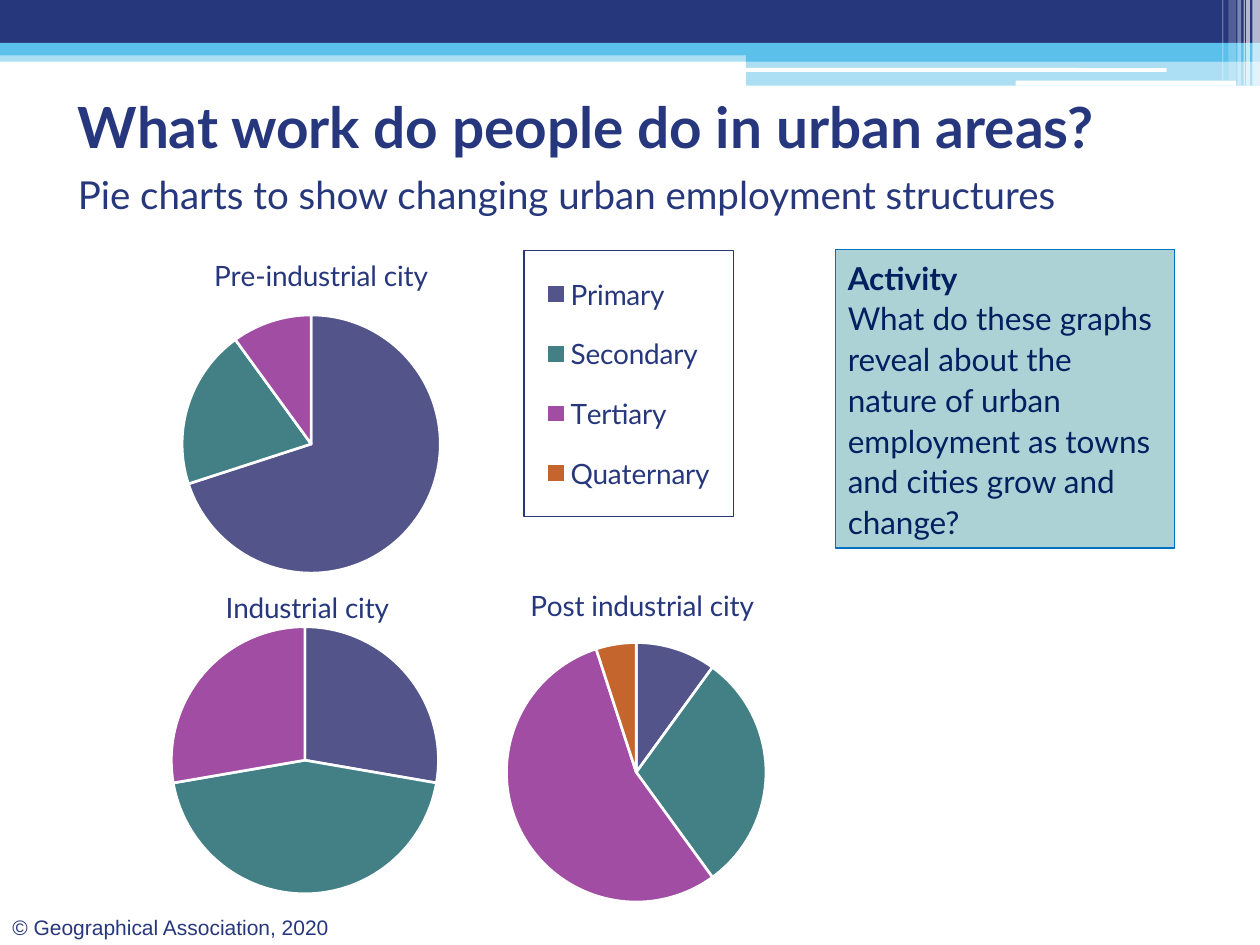
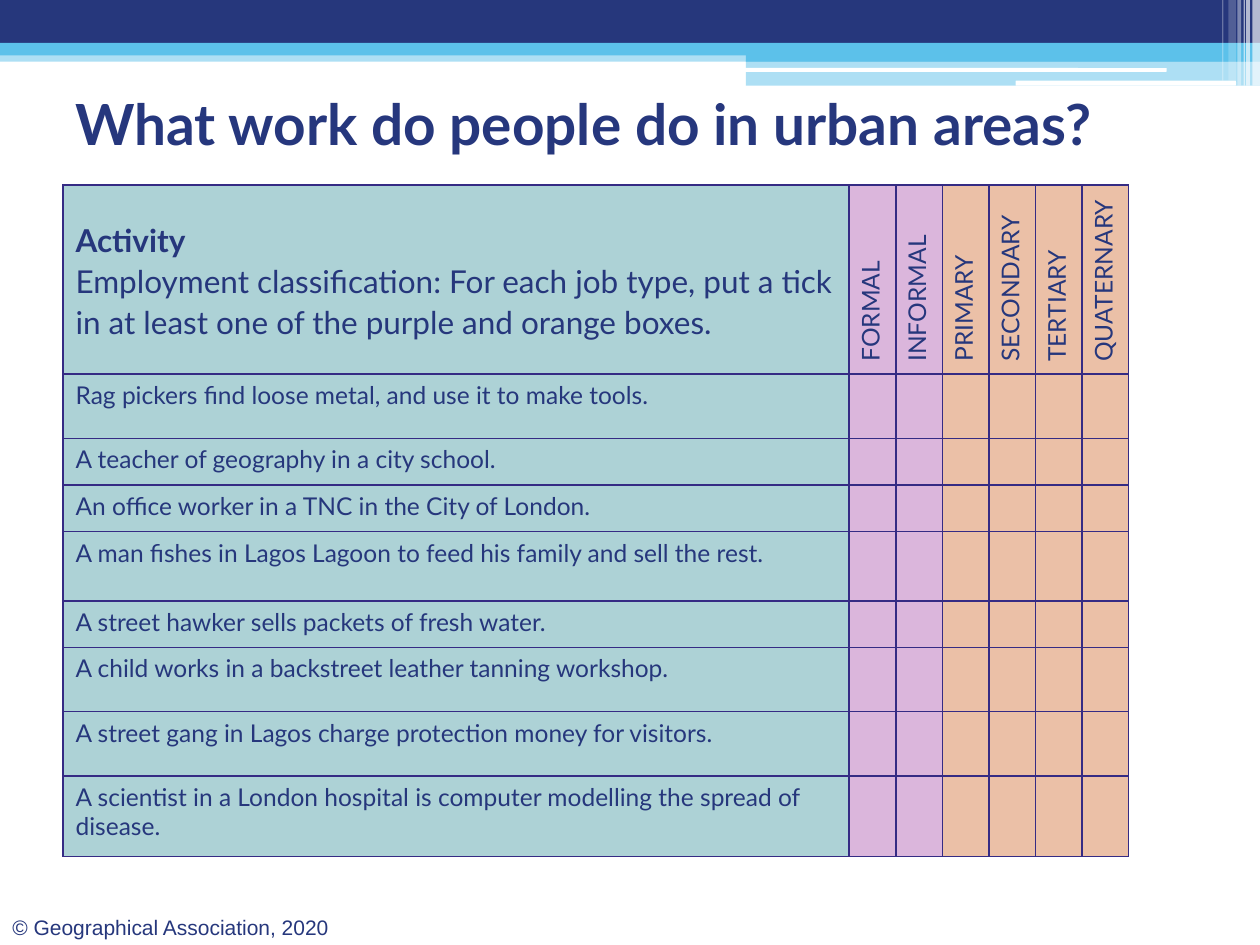
"""Build two slides about employment in urban areas."""

from lxml.etree import SubElement
from pptx import Presentation
from pptx.chart.data import CategoryChartData
from pptx.dml.color import RGBColor
from pptx.enum.chart import XL_CHART_TYPE
from pptx.enum.shapes import MSO_SHAPE
from pptx.enum.text import MSO_ANCHOR
from pptx.oxml.ns import qn
from pptx.util import Inches, Pt

NAVY = RGBColor(0x26, 0x37, 0x7C)
TITLE_NAVY = RGBColor(0x26, 0x37, 0x7D)
DARK_BLUE = RGBColor(0x00, 0x20, 0x60)
BOX_BLUE = RGBColor(0x00, 0x70, 0xC0)
SKY = RGBColor(0x5C, 0xC1, 0xEA)
WHITE = RGBColor(0xFF, 0xFF, 0xFF)
VIOLET = RGBColor(0x35, 0x2B, 0x84)
PALE_TEAL = RGBColor(0xAD, 0xD2, 0xD6)
PALE_PURPLE = RGBColor(0xDB, 0xB6, 0xDC)
PALE_ORANGE = RGBColor(0xEB, 0xC0, 0xA7)
SECTOR_COLORS = {
    "Primary": RGBColor(0x53, 0x54, 0x8A),
    "Secondary": RGBColor(0x43, 0x80, 0x86),
    "Tertiary": RGBColor(0xA0, 0x4D, 0xA3),
    "Quaternary": RGBColor(0xC4, 0x65, 0x2D),
}

TITLE_FORMAT = {"size": Pt(32.4), "name": "Lato", "bold": True}
SUBTITLE_FORMAT = {"size": Pt(22), "name": "Lato"}
HEADING_FORMAT = {"size": Pt(18), "name": "Lato", "bold": True}
BODY_FORMAT = {"size": Pt(18), "name": "Lato", "bold": False}
CHART_FORMAT = {"size": Pt(16), "name": "Lato", "bold": False}
CELL_FORMAT = {"size": Pt(14), "name": "Lato", "bold": False}
FOOTER_FORMAT = {"size": Pt(12), "name": "Arial"}

BANDS = [
    (MSO_SHAPE.RECTANGLE, 0, 0.4, 10, 0.09, SKY, 50),
    (MSO_SHAPE.RECTANGLE, 0, 0, 10, 0.34, NAVY, 100),
    (MSO_SHAPE.RECTANGLE, 0, 0.34, 10, 0.1, SKY, 100),
    (MSO_SHAPE.RECTANGLE, 5.92, 0.39, 4.08, 0.1, SKY, 100),
    (MSO_SHAPE.RECTANGLE, 5.92, 0.48, 4.08, 0.2, SKY, 50),
    (MSO_SHAPE.ROUNDED_RECTANGLE, 5.91, 0.54, 3.35, 0.03, WHITE, 100),
    (MSO_SHAPE.ROUNDED_RECTANGLE, 8.06, 0.64, 1.75, 0.04, WHITE, 100),
    (MSO_SHAPE.RECTANGLE, 9.94, 0, 0.06, 0.68, WHITE, 65),
    (MSO_SHAPE.RECTANGLE, 9.89, 0, 0.03, 0.68, WHITE, 65),
    (MSO_SHAPE.RECTANGLE, 9.87, 0, 0.01, 0.68, WHITE, 60),
    (MSO_SHAPE.RECTANGLE, 9.82, 0, 0.03, 0.68, WHITE, 40),
    (MSO_SHAPE.RECTANGLE, 9.75, 0, 0.06, 0.64, WHITE, 20),
    (MSO_SHAPE.RECTANGLE, 9.7, 0, 0.01, 0.64, WHITE, 30),
]


def write_paragraphs(text_frame, lines, color, line_spacing=None):
    """Write one formatted paragraph for each text and format."""
    text_frame.word_wrap = True
    for index, (text, text_format) in enumerate(lines):
        paragraph = text_frame.add_paragraph() if index else text_frame.paragraphs[0]
        paragraph.line_spacing = line_spacing
        run = paragraph.add_run()
        run.text = text
        run.font.color.rgb = color
        for attribute, value in text_format.items():
            setattr(run.font, attribute, value)


def add_child(parent, tag, **attributes):
    """Append an XML element and return it."""
    return SubElement(parent, qn(tag), attributes)


presentation = Presentation()
presentation.slide_width = Inches(10)
presentation.slide_height = Inches(7.5)

slides = []
for title_left, title_top in [(0.52, 0.5), (0.5, 0.48)]:
    slide = presentation.slides.add_slide(presentation.slide_layouts[6])
    slides.append(slide)
    for preset, left, top, width, height, color, opacity in BANDS:
        band = slide.shapes.add_shape(
            preset, Inches(left), Inches(top), Inches(width), Inches(height)
        )
        band.shadow.inherit = False
        band.line.fill.background()
        band.fill.solid()
        band.fill.fore_color.rgb = color
        if opacity < 100:
            color_element = band.element.spPr.find(qn("a:solidFill"))[0]
            add_child(color_element, "a:alpha", val=str(opacity * 1000))
    footer = slide.shapes.add_textbox(Inches(0), Inches(7.21), Inches(2.87), Inches(0.3))
    write_paragraphs(
        footer.text_frame, [("© Geographical Association, 2020", FOOTER_FORMAT)], NAVY
    )
    title = slide.shapes.add_textbox(
        Inches(title_left), Inches(title_top), Inches(9), Inches(0.99)
    )
    title.text_frame.vertical_anchor = MSO_ANCHOR.MIDDLE
    write_paragraphs(
        title.text_frame,
        [("What work do people do in urban areas?", TITLE_FORMAT)],
        TITLE_NAVY,
    )

chart_slide, table_slide = slides

activity = chart_slide.shapes.add_shape(
    MSO_SHAPE.RECTANGLE, Inches(6.63), Inches(1.98), Inches(2.69), Inches(2.37)
)
activity.shadow.inherit = False
activity.fill.solid()
activity.fill.fore_color.rgb = PALE_TEAL
activity.line.color.rgb = BOX_BLUE
activity.line.width = Pt(0.75)
activity.text_frame.vertical_anchor = MSO_ANCHOR.TOP
write_paragraphs(
    activity.text_frame,
    [
        ("Activity", HEADING_FORMAT),
        (
            "What do these graphs reveal about the nature of urban employment "
            "as towns and cities grow and change?",
            BODY_FORMAT,
        ),
    ],
    DARK_BLUE,
    1.08,
)
for paragraph in activity.text_frame.paragraphs:
    paragraph.alignment = 1

PIES = [
    ("Post industrial city", (3.26, 4.45, 3.59, 2.85), (10, 30, 55, 5),
     (4.17, 4.61), (4.02, 5.1, 2.06, 2.06)),
    ("Industrial city", (-0.19, 4.45, 5.19, 3.13), (28, 45, 28, 0),
     (1.75, 4.62), (1.36, 4.97, 2.12, 2.13)),
    ("Pre-industrial city", (0.59, 1.85, 5.27, 2.84), (70, 20, 10, 0),
     (1.66, 1.99), (1.44, 2.5, 2.06, 2.05)),
]
LEGEND_AREA = (4.16, 1.99, 1.66, 2.11)

for city, frame, shares, title_place, pie_area in PIES:
    chart_data = CategoryChartData()
    chart_data.categories = list(SECTOR_COLORS)
    chart_data.add_series("Series 1", shares)
    chart = chart_slide.shapes.add_chart(
        XL_CHART_TYPE.PIE, *[Inches(length) for length in frame], chart_data
    ).chart
    chart.font.size = Pt(10)
    chart.font.name = "Lato"
    chart.font.color.rgb = VIOLET
    chart.has_title = True
    write_paragraphs(chart.chart_title.text_frame, [(city, CHART_FORMAT)], NAVY)
    plot = chart.plots[0]
    plot.vary_by_categories = True
    for index, color in enumerate(SECTOR_COLORS.values()):
        point = plot.series[0].points[index]
        point.format.fill.solid()
        point.format.fill.fore_color.rgb = color
        point.format.line.color.rgb = WHITE
        point.format.line.width = Pt(1.5)

    chart_element = chart.element.find(qn("c:chart"))
    background = add_child(chart.element, "c:spPr")
    add_child(background, "a:noFill")
    add_child(add_child(background, "a:ln"), "a:noFill")
    chart_element.addnext(background)

    areas = [("c:title", 1, title_place), ("c:plotArea", 0, pie_area)]
    chart.has_legend = city == "Pre-industrial city"
    if chart.has_legend:
        chart.legend.include_in_layout = False
        for attribute, value in CHART_FORMAT.items():
            setattr(chart.legend.font, attribute, value)
        chart.legend.font.color.rgb = NAVY
        legend_element = chart_element.find(qn("c:legend"))
        border = add_child(legend_element, "c:spPr")
        border_fill = add_child(add_child(border, "a:ln", w="9525"), "a:solidFill")
        add_child(border_fill, "a:srgbClr", val=str(NAVY))
        legend_element.find(qn("c:overlay")).addnext(border)
        areas.append(("c:legend", 1, LEGEND_AREA))

    for tag, position, area in areas:
        parent = chart_element.find(qn(tag))
        for old_layout in parent.findall(qn("c:layout")):
            parent.remove(old_layout)
        layout = add_child(parent, "c:layout")
        parent.insert(position, layout)
        manual = add_child(layout, "c:manualLayout")
        if tag == "c:plotArea":
            add_child(manual, "c:layoutTarget", val="inner")
        add_child(manual, "c:xMode", val="edge")
        add_child(manual, "c:yMode", val="edge")
        left, top, width, height = frame
        offsets = (area[0] - left, area[1] - top, *area[2:])
        for name, offset, whole in zip("xywh", offsets, (width, height, width, height)):
            add_child(manual, f"c:{name}", val=f"{offset / whole:.4f}")

subtitle = chart_slide.shapes.add_textbox(
    Inches(0.52), Inches(1.31), Inches(9.21), Inches(0.47)
)
write_paragraphs(
    subtitle.text_frame,
    [("Pie charts to show changing urban employment structures", SUBTITLE_FORMAT)],
    NAVY,
)

CLASSES = ["FORMAL", "INFORMAL", "PRIMARY", "SECONDARY", "TERTIARY", "QUATERNARY"]
JOBS = [
    ("Rag pickers find loose metal, and use it to make tools.", 0.51),
    ("A teacher of geography in a city school.", 0.37),
    ("An office worker in a TNC in the City of London.", 0.37),
    ("A man fishes in Lagos Lagoon to feed his family and sell the rest.", 0.55),
    ("A street hawker sells packets of fresh water.", 0.37),
    ("A child works in a backstreet leather tanning workshop.", 0.51),
    ("A street gang in Lagos charge protection money for visitors.", 0.51),
    ("A scientist in a London hospital is computer modelling the spread of disease.", 0.64),
]
COLUMN_FILLS = [PALE_TEAL] + [PALE_PURPLE] * 2 + [PALE_ORANGE] * 4

table = table_slide.shapes.add_table(
    len(JOBS) + 1, len(COLUMN_FILLS), Inches(0.5), Inches(1.47), Inches(8.44), Inches(5.32)
).table
for index, column in enumerate(table.columns):
    column.width = Inches(0.37 if index else 6.24)
for row, height in zip(table.rows, [1.5] + [height for _, height in JOBS]):
    row.height = Inches(height)
    for cell, color in zip(row.cells, COLUMN_FILLS):
        properties = cell._tc.get_or_add_tcPr()
        for side in "LRTB":
            line = add_child(properties, f"a:ln{side}", w="12700")
            add_child(add_child(line, "a:solidFill"), "a:srgbClr", val=str(VIOLET))
        cell.fill.solid()
        cell.fill.fore_color.rgb = color

instruction = table.cell(0, 0)
instruction.vertical_anchor = MSO_ANCHOR.MIDDLE
write_paragraphs(
    instruction.text_frame,
    [
        ("Activity", HEADING_FORMAT),
        (
            "Employment classification: For each job type, put a tick in at least one "
            "of the purple and orange boxes.",
            BODY_FORMAT,
        ),
    ],
    NAVY,
    1.08,
)
for column, label in enumerate(CLASSES, 1):
    cell = table.cell(0, column)
    cell._tc.get_or_add_tcPr().set("vert", "vert270")
    write_paragraphs(cell.text_frame, [(label, CELL_FORMAT)], NAVY)
for row, (job, _) in enumerate(JOBS, 1):
    write_paragraphs(table.cell(row, 0).text_frame, [(job, CELL_FORMAT)], NAVY)
    for column in range(1, len(COLUMN_FILLS)):
        paragraph = table.cell(row, column).text_frame.paragraphs[0]
        add_child(paragraph._p, "a:endParaRPr", sz="1400")

presentation.save("out.pptx")
